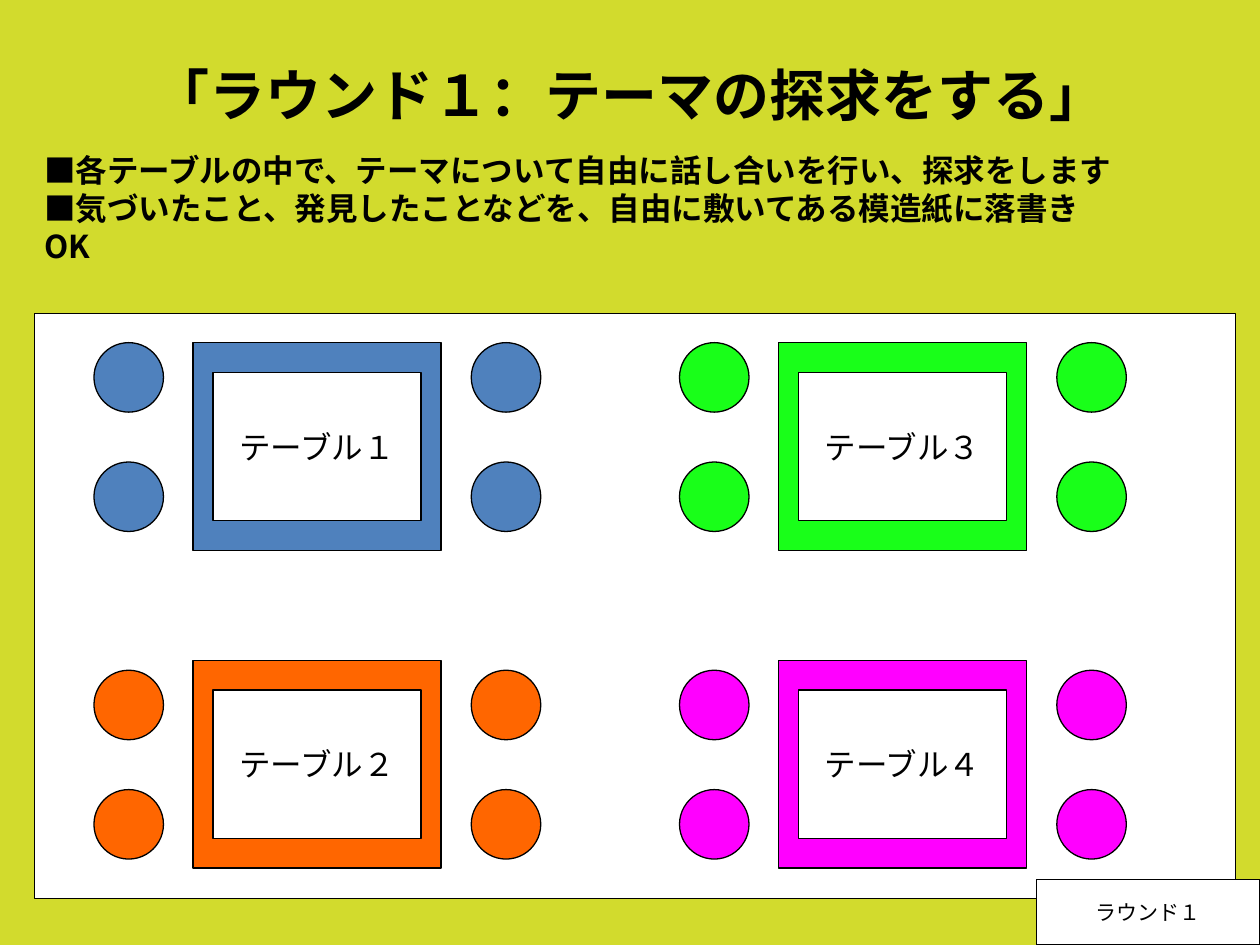
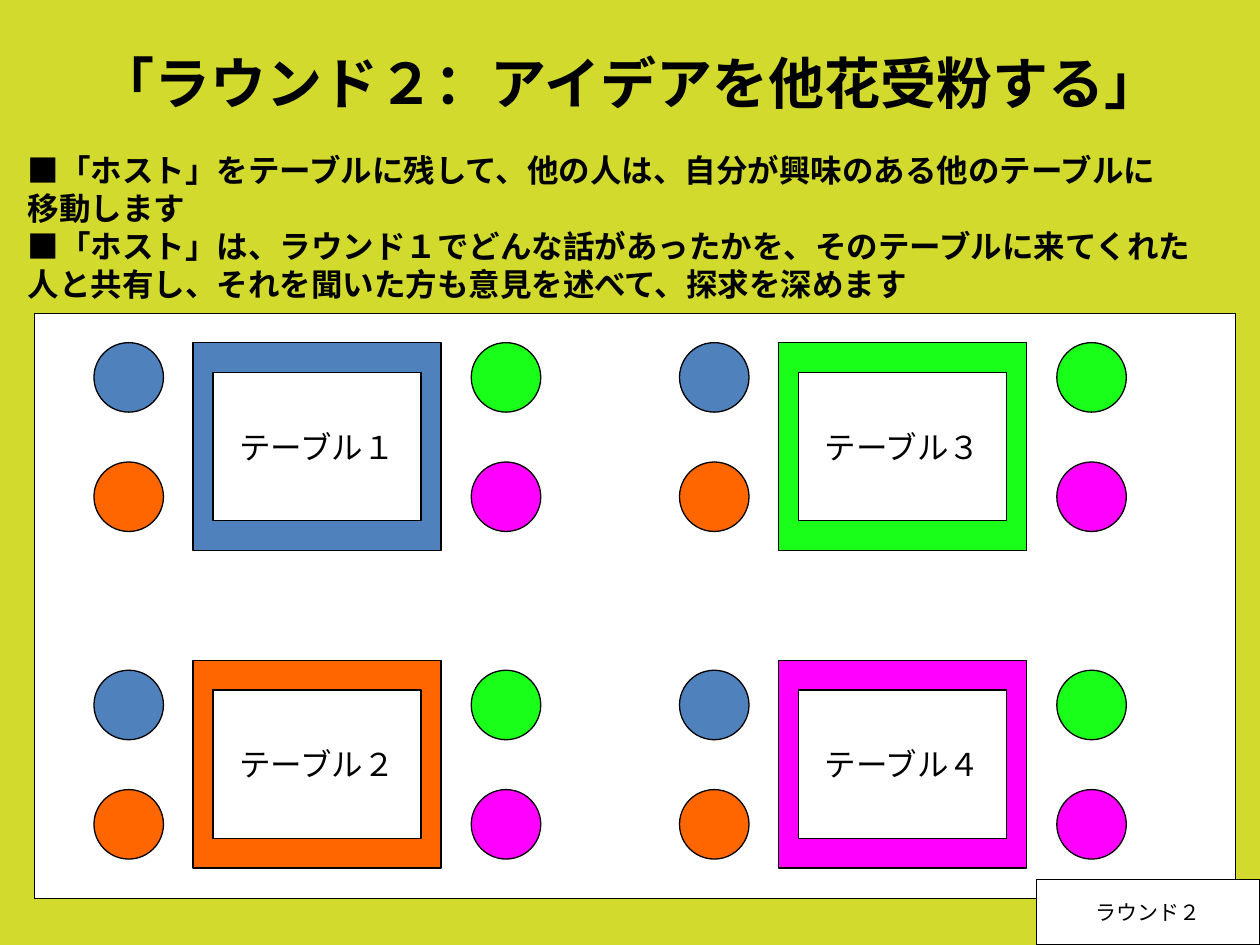
from dataclasses import dataclass
from itertools import product

from lxml.etree import SubElement
from pptx import Presentation
from pptx.dml.color import RGBColor
from pptx.enum.shapes import MSO_SHAPE
from pptx.enum.text import MSO_ANCHOR, MSO_AUTO_SIZE, PP_ALIGN
from pptx.oxml.ns import qn
from pptx.util import Pt


@dataclass(frozen=True)
class Theme:
    background: str = "D2DB2D"
    paper: str = "FFFFFF"
    ink: str = "000000"
    blue: str = "4F81BD"
    orange: str = "FF6600"
    green: str = "00FF00"
    magenta: str = "FF00FF"
    green_opacity: int = 90
    japanese: str = "Noto Sans CJK JP"
    latin: str = "Arial"
    title_size: float = 32
    text_size: float = 18
    tag_size: float = 12
    leading: float = 21.7
    line_width: float = 0.75


THEME = Theme()

# Tables run down the left column, then down the right one.
TABLES = [
    ("テーブル１", THEME.blue),
    ("テーブル２", THEME.orange),
    ("テーブル３", THEME.green),
    ("テーブル４", THEME.magenta),
]
TABLE_COLOURS = [colour for _, colour in TABLES]

# Seats at one table: upper left, lower left, upper right, lower right.
ROUNDS = [
    {
        "title": "「ラウンド１：テーマの探求をする」",
        "title_lift": 26,
        "lines": [
            "■各テーブルの中で、テーマについて自由に話し合いを行い、探求をします",
            "■気づいたこと、発見したことなどを、自由に敷いてある模造紙に落書きOK",
        ],
        "lines_box": (18, 82.8, 628, 50.4),
        "lines_font": THEME.japanese,
        "seats": [[colour] * 4 for colour in TABLE_COLOURS],
        "tag": "ラウンド１",
    },
    {
        "title": "「ラウンド２：アイデアを他花受粉する」",
        "title_lift": 39.6,
        "lines": [
            "■「ホスト」をテーブルに残して、他の人は、自分が興味のある他のテーブルに",
            "移動します",
            "■「ホスト」は、ラウンド１でどんな話があったかを、そのテーブルに来てくれた",
            "人と共有し、それを聞いた方も意見を述べて、探求を深めます",
        ],
        "lines_box": (8.6, 82.8, 685.4, 115.2),
        "lines_font": THEME.latin,
        "seats": [TABLE_COLOURS] * 4,
        "tag": "ラウンド２",
    },
]

TITLE_BOX = (36, 21.6, 648, 90)
ROOM_BOX = (19.6, 179.2, 686.4, 334.2)
TAG_BOX = (592.4, 502.4, 127.6, 37.6)
TABLE_X, TABLE_Y = (110.3, 444.9), (195.8, 377.3)
TABLE_W, TABLE_H = 141.8, 118.8
SHEET_INSET_X, SHEET_INSET_Y = 11.4, 17
SEAT = 39.7
SEAT_DX, SEAT_PITCH = (-56.6, 159), 68.2
SEAT_DY = (0, 5.7)


def place(s, box):
    s.left, s.top, s.width, s.height = (Pt(v) for v in box)


def add_run(p, text, size, font, bold=False):
    r = p.add_run()
    r.text = text
    r.font.size = Pt(size)
    r.font.bold = bold
    r.font.name = font
    r.font.color.rgb = RGBColor.from_string(THEME.ink)
    SubElement(r.font._element, qn("a:ea"), typeface=THEME.japanese)


def add_box(slide, box, colour, text="", size=THEME.text_size,
            shape=MSO_SHAPE.RECTANGLE):
    s = slide.shapes.add_shape(shape, *(Pt(v) for v in box))
    s.shadow.inherit = False
    s.fill.solid()
    s.fill.fore_color.rgb = RGBColor.from_string(colour)
    if colour == THEME.green:
        clr = s._element.spPr.find(qn("a:solidFill"))[0]
        SubElement(clr, qn("a:alpha"), val=str(THEME.green_opacity * 1000))
    s.line.color.rgb = RGBColor.from_string(THEME.ink)
    s.line.width = Pt(THEME.line_width)
    if text:
        tf = s.text_frame
        tf.word_wrap = False
        tf.vertical_anchor = MSO_ANCHOR.MIDDLE
        p = tf.paragraphs[0]
        p.alignment = PP_ALIGN.CENTER
        add_run(p, text, size, THEME.latin)


def fill_title(s, text, lift):
    """Raise the centred title by widening the inset below it."""
    place(s, TITLE_BOX)
    tf = s.text_frame
    tf.auto_size = MSO_AUTO_SIZE.NONE
    tf.vertical_anchor = MSO_ANCHOR.MIDDLE
    tf.margin_top, tf.margin_bottom = 0, Pt(lift)
    p = tf.paragraphs[0]
    p.alignment = PP_ALIGN.CENTER
    add_run(p, text, THEME.title_size, THEME.japanese, bold=True)


def fill_lines(s, lines, box, font):
    place(s, box)
    tf = s.text_frame
    tf.word_wrap = True
    tf.auto_size = MSO_AUTO_SIZE.NONE
    for i, line in enumerate(lines):
        p = tf.add_paragraph() if i else tf.paragraphs[0]
        p.space_before = Pt(0)
        p.line_spacing = Pt(THEME.leading)
        pPr = p._p.get_or_add_pPr()
        pPr.set("marL", "0")
        pPr.set("indent", "0")
        SubElement(pPr, qn("a:buNone"))
        add_run(p, line, THEME.text_size, font, bold=True)


def add_table_group(slide, index, seats):
    """Draw one café table with its paper sheet and four seats."""
    name, colour = TABLES[index]
    col, row = divmod(index, 2)
    x, y = TABLE_X[col], TABLE_Y[row]
    add_box(slide, (x, y, TABLE_W, TABLE_H), colour)
    add_box(slide, (x + SHEET_INSET_X, y + SHEET_INSET_Y,
                    TABLE_W - 2 * SHEET_INSET_X, TABLE_H - 2 * SHEET_INSET_Y),
            THEME.paper, name)
    for (dx, level), seat in zip(product(SEAT_DX, range(2)), seats):
        top = y + SEAT_DY[row] + level * SEAT_PITCH
        add_box(slide, (x + dx, top, SEAT, SEAT), seat, shape=MSO_SHAPE.OVAL)


def add_round(prs, content):
    slide = prs.slides.add_slide(prs.slide_layouts[1])
    title, body = slide.placeholders
    fill_title(title, content["title"], content["title_lift"])
    fill_lines(body, content["lines"], content["lines_box"], content["lines_font"])
    add_box(slide, ROOM_BOX, THEME.paper)
    for index, seats in enumerate(content["seats"]):
        add_table_group(slide, index, seats)
    add_box(slide, TAG_BOX, THEME.paper, content["tag"], THEME.tag_size)


def main():
    prs = Presentation()
    prs.slide_width, prs.slide_height = Pt(720), Pt(540)
    fill = prs.slide_master.background.fill
    fill.solid()
    fill.fore_color.rgb = RGBColor.from_string(THEME.background)
    for content in ROUNDS:
        add_round(prs, content)
    prs.save("out.pptx")


if __name__ == "__main__":
    main()
